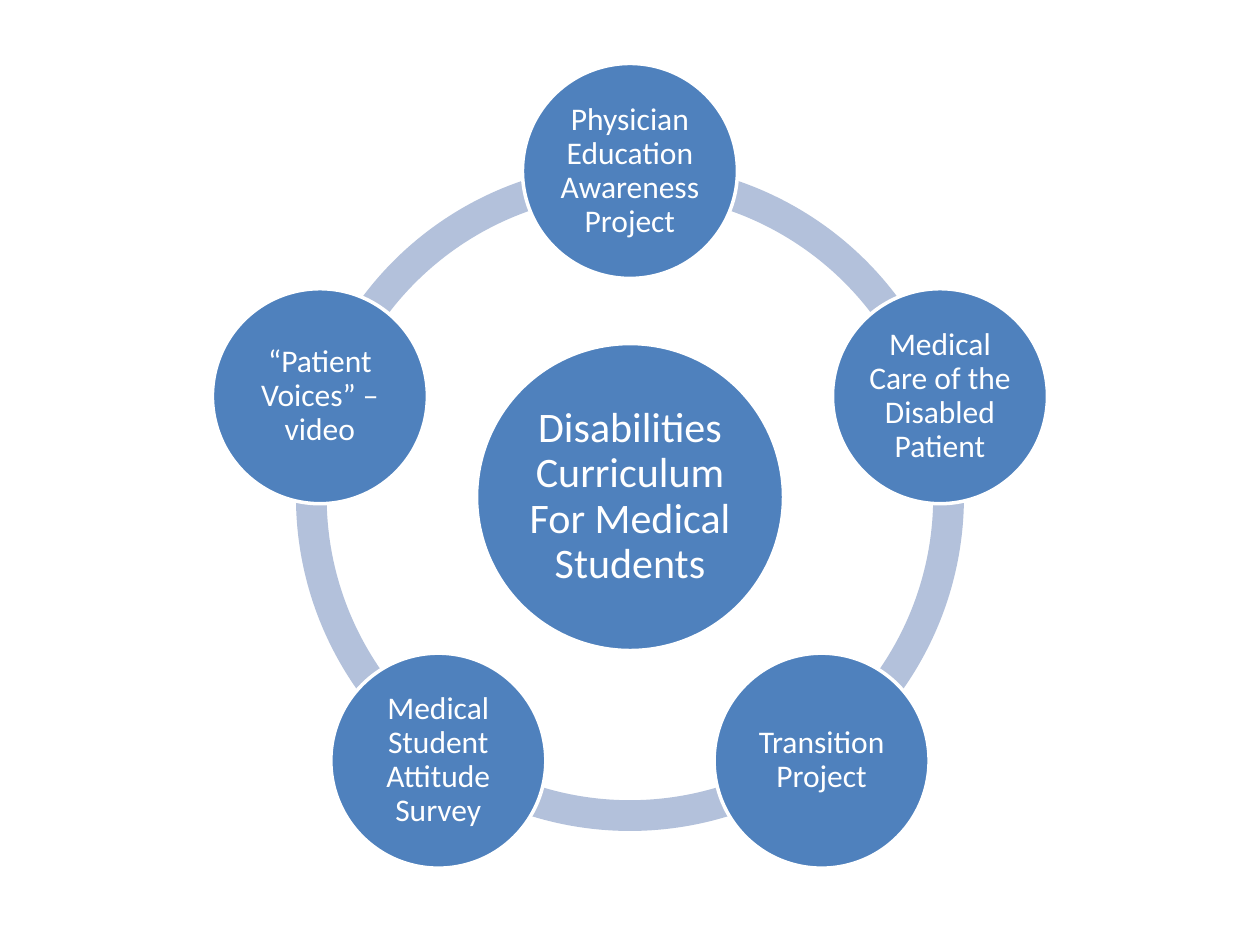
from math import cos, radians, sin

from pptx import Presentation
from pptx.dml.color import RGBColor
from pptx.enum.shapes import MSO_SHAPE
from pptx.enum.text import MSO_ANCHOR, PP_ALIGN
from pptx.util import Emu, Pt

BLOCK_ARC, OVAL = MSO_SHAPE.BLOCK_ARC, MSO_SHAPE.OVAL
CENTER, MIDDLE = PP_ALIGN.CENTER, MSO_ANCHOR.MIDDLE

BLUE, PALE_BLUE, WHITE = "4F81BD", "B3C1DB", "FFFFFF"
FONT = "Calibri"
PX_PER_INCH = 126
RING_THICKNESS = 0.046
ANGLE_UNIT = 0.6  # adjustment value of one degree

HUB_TEXT = "Disabilities Curriculum For Medical Students"
SATELLITE_TEXTS = [
    "Physician Education Awareness Project",
    "Medical Care of the Disabled Patient",
    "Transition Project",
    "Medical Student Attitude Survey",
    "“Patient Voices” – video",
]


def px(length):
    return Emu(round(length * 914400 / PX_PER_INCH))


def color(hex_string):
    return RGBColor.from_string(hex_string)


def add_centered_shape(group, kind, center_x, center_y, diameter, fill):
    shape = group.shapes.add_shape(
        kind,
        px(center_x - diameter / 2),
        px(center_y - diameter / 2),
        px(diameter),
        px(diameter),
    )
    shape.shadow.inherit = False
    shape.fill.solid()
    shape.fill.fore_color.rgb = color(fill)
    return shape


def add_arc(group, center_x, center_y, diameter, start, end):
    """Draw one piece of the ring, clockwise between two angles in degrees."""
    arc = add_centered_shape(group, BLOCK_ARC, center_x, center_y, diameter, PALE_BLUE)
    arc.line.fill.background()
    arc.adjustments[0] = start % 360 * ANGLE_UNIT
    arc.adjustments[1] = end % 360 * ANGLE_UNIT
    arc.adjustments[2] = RING_THICKNESS


def add_circle(group, center_x, center_y, diameter, text, size):
    circle = add_centered_shape(group, OVAL, center_x, center_y, diameter, BLUE)
    circle.line.color.rgb = color(WHITE)
    circle.line.width = Pt(2)
    frame = circle.text_frame
    frame.word_wrap = True
    frame.vertical_anchor = MIDDLE
    frame.margin_left = frame.margin_right = px(4)
    frame.margin_top = frame.margin_bottom = px(4)
    paragraph = frame.paragraphs[0]
    paragraph.text = text
    paragraph.alignment = CENTER
    paragraph.line_spacing = 0.9
    paragraph.font.name = FONT
    paragraph.font.size = Pt(size)
    paragraph.font.color.rgb = color(WHITE)


def add_radial_cycle(slide, left, top, ring_diameter):
    """Place a hub, a ring around it and evenly spaced satellites on the ring."""
    group = slide.shapes.add_group_shape()
    center_x, center_y = left + ring_diameter / 2, top + ring_diameter / 2
    orbit = 326
    step = 360 / len(SATELLITE_TEXTS)
    angles = [index * step - 90 for index in range(len(SATELLITE_TEXTS))]

    for angle in reversed(angles):
        add_arc(group, center_x, center_y, ring_diameter, angle - step, angle)
    add_circle(group, center_x, center_y, 307, HUB_TEXT, 24)
    for angle, text in zip(angles, SATELLITE_TEXTS):
        x = center_x + orbit * cos(radians(angle))
        y = center_y + orbit * sin(radians(angle))
        add_circle(group, x, y, 215, text, 18)


def main():
    presentation = Presentation()
    presentation.slide_width = px(1260)
    presentation.slide_height = px(945)
    slide = presentation.slides.add_slide(presentation.slide_layouts[6])
    add_radial_cycle(slide, 296, 163, 668)
    presentation.save("out.pptx")


if __name__ == "__main__":
    main()
